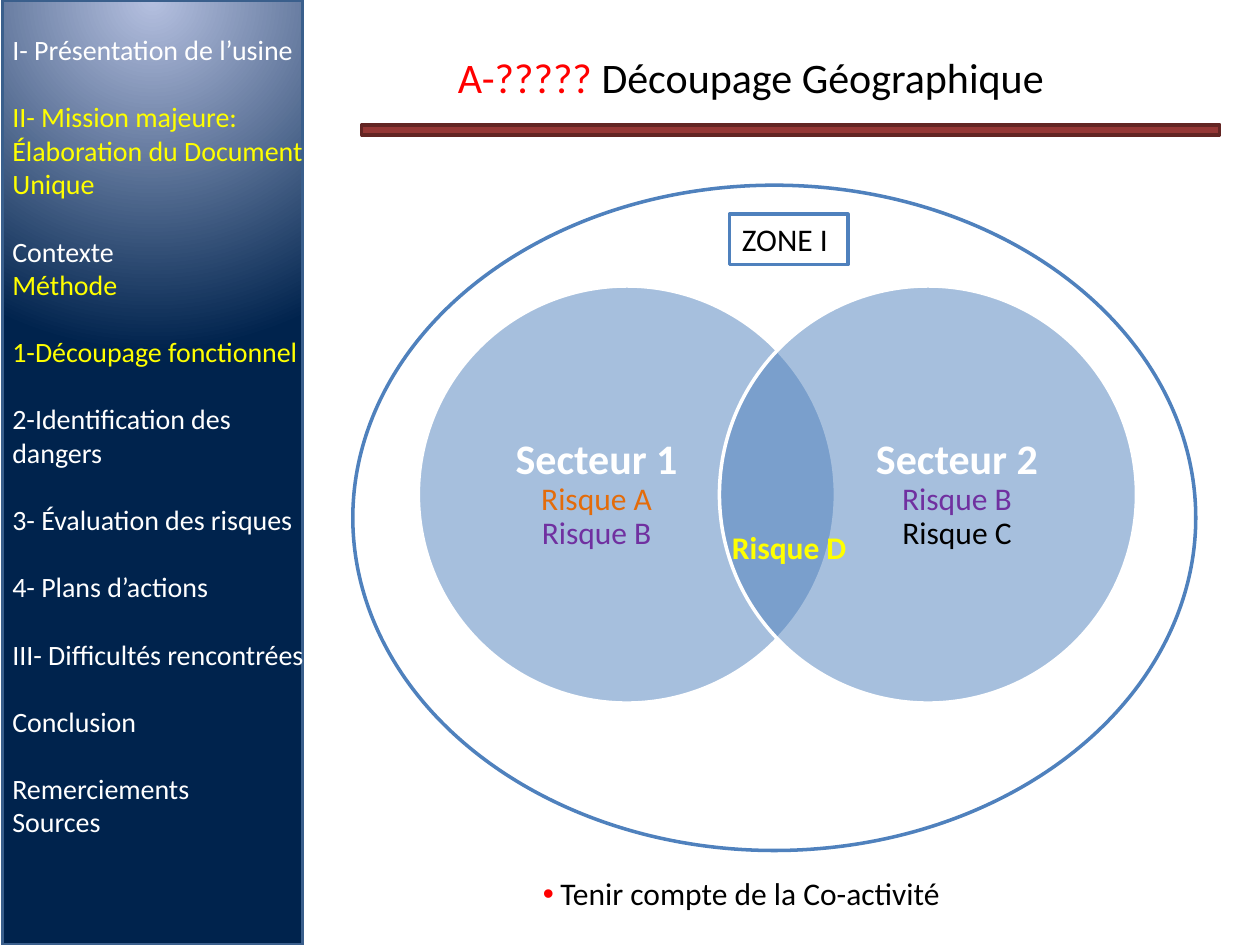
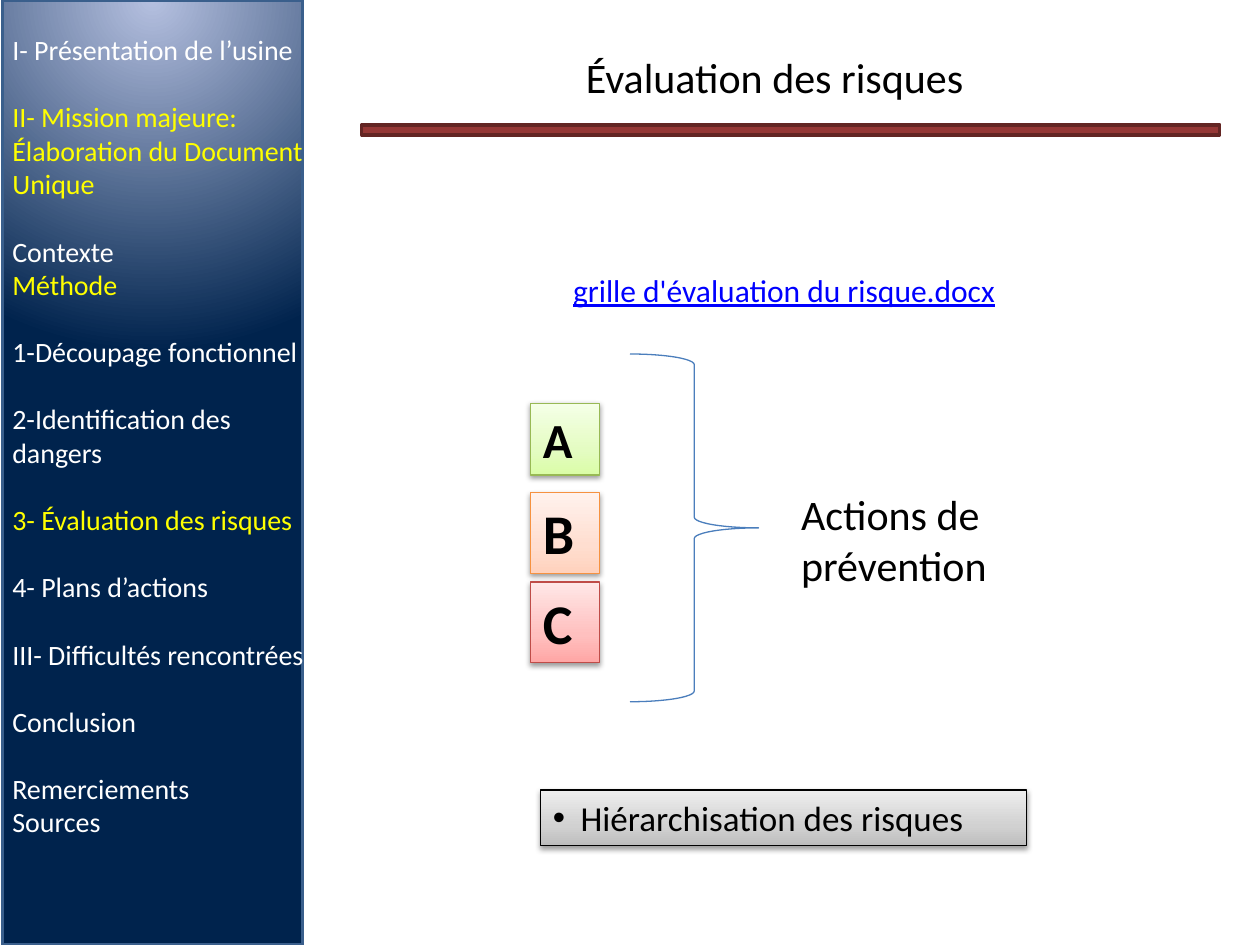
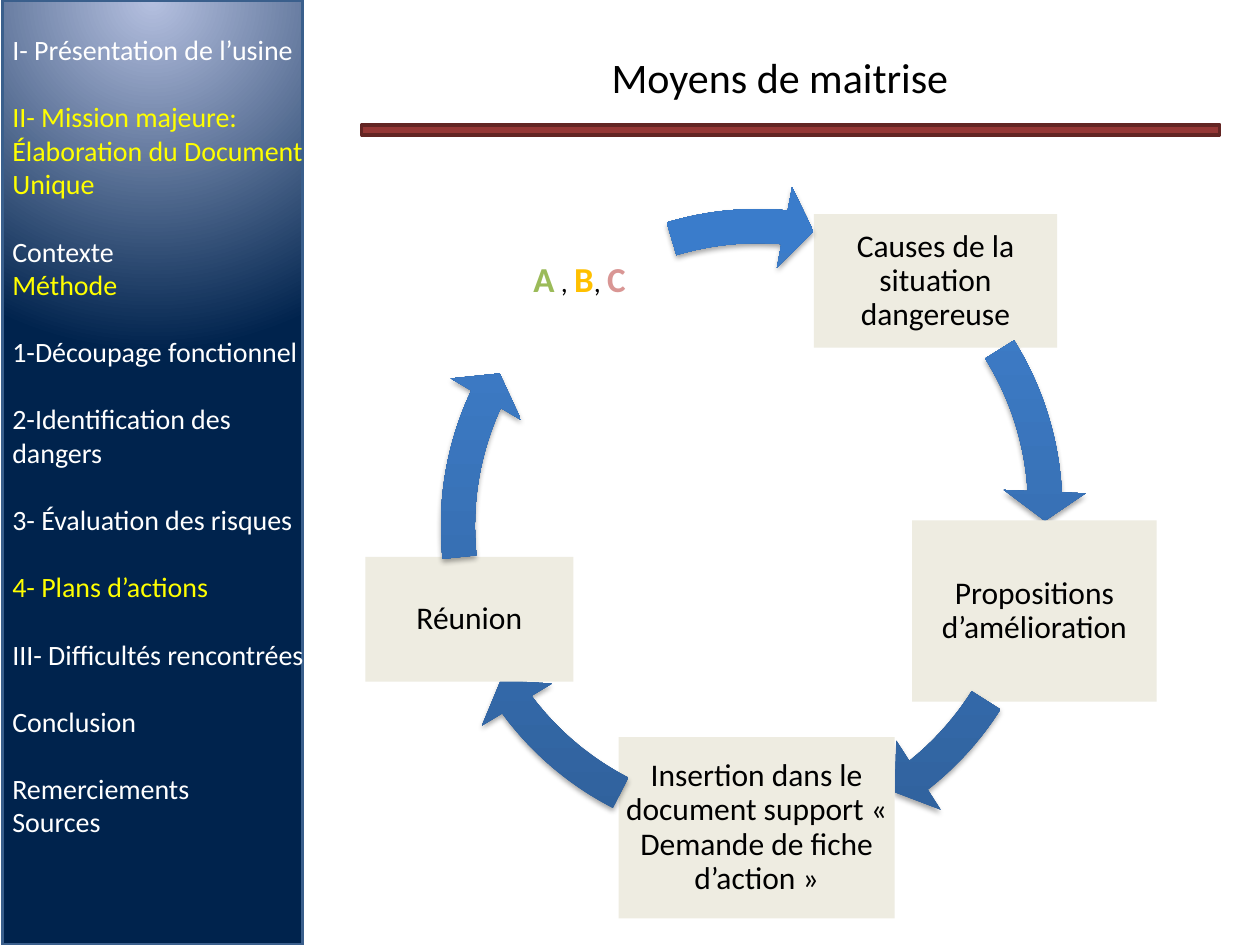
from lxml import etree
from pptx import Presentation
from pptx.dml.color import RGBColor
from pptx.enum.shapes import MSO_SHAPE as Shape
from pptx.enum.text import MSO_ANCHOR as Anchor, PP_ALIGN as Align
from pptx.oxml.ns import qn
from pptx.util import Inches, Pt

# Shared palette and wording
FONT = "Calibri"
BLACK, WHITE, RED, YELLOW = "000000", "FFFFFF", "FF0000", "FFFF00"
BLUE, BEIGE, PURPLE, ORANGE = "4F81BD", "EEECE1", "7030A0", "E46C0A"

SIDEBAR_STOPS = [(0, "B5C0E0"), (71, "00234D")]
GREEN_STOPS = [(0, "DAFDA7"), (35, "E4FCC2"), (100, "F5FFE7")]
ORANGE_STOPS = [(0, "FFD2BD"), (35, "FFDED0"), (100, "FFF2ED")]
RED_STOPS = [(0, "FFA6A5"), (35, "FFC0BF"), (100, "FFE7E7")]
GREY_STOPS = [(0, "BDBDBD"), (35, "D1D1D1"), (100, "EEEEEE")]
ARROW_STOPS = [(0, "2F5F99"), (80, "3D7CC7"), (100, "3A7CCB")]

BOX_SHADOW = (38, 1.6)
ARROW_SHADOW = (35, 1.8)

MISSION = "II- Mission majeure: Élaboration du Document Unique"
METHOD = "Méthode"
CUTTING = "1-Découpage fonctionnel"
EVALUATION = "3- Évaluation des risques"
PLANS = "4- Plans d’actions"
OUTLINE = [
    ["I- Présentation de l’usine"],
    [MISSION],
    ["Contexte", METHOD],
    [CUTTING],
    ["2-Identification des dangers"],
    [EVALUATION],
    [PLANS],
    ["III- Difficultés rencontrées"],
    ["Conclusion"],
    ["Remerciements", "Sources"],
]


def color(value):
    return RGBColor.from_string(value)


def run(text, size=18, tint=BLACK, **font):
    return text, tint, {"name": FONT, "size": Pt(size), **font}


def add_child(parent, tag, **attributes):
    return etree.SubElement(parent, qn(tag), {key: str(value) for key, value in attributes.items()})


class Deck:
    """Holds the presentation, its style and the current slide."""

    def __init__(self):
        self.presentation = Presentation()
        self.presentation.slide_width = Inches(10)
        self.presentation.slide_height = Inches(7.5)
        self.slide = None

    def new_slide(self, title_left, title_runs, active):
        layout = self.presentation.slide_layouts[6]
        self.slide = self.presentation.slides.add_slide(layout)
        self.shape(Shape.RECTANGLE, (0.02, 0, 2.38, 7.5), SIDEBAR_STOPS, ("3A5F8C", 2), radial=True)
        self.shape(Shape.RECTANGLE, (2.87, 0.99, 6.81, 0.08), "953735", ("632523", 2))
        self.text((title_left, 0.29, 9, 0.63), [title_runs], anchor=Anchor.MIDDLE, alignment=Align.CENTER)
        self.outline({MISSION, METHOD, active})

    def outline(self, highlighted):
        items = [line for group in OUTLINE for line in group]
        openers = {group[0] for group in OUTLINE[1:]}
        runs = [[run(line, 16, YELLOW if line in highlighted else WHITE)] for line in items]
        box = self.text((0, 0.21, 2.64, 6.83), runs)
        for line, paragraph in zip(items, box.text_frame.paragraphs):
            if line in openers:
                paragraph.space_before = Pt(19.2)

    def shape(self, kind, place, fill=None, line=None, radial=False, alpha=None, shadow=None):
        shape = self.slide.shapes.add_shape(kind, *map(Inches, place))
        shape.shadow.inherit = False
        # Fill
        if fill is None:
            shape.fill.background()
        elif isinstance(fill, str):
            shape.fill.solid()
            shape.fill.fore_color.rgb = color(fill)
        else:
            self.gradient(shape, fill, radial)
        if alpha:
            tint = shape._element.spPr.find(qn("a:solidFill"))[0]
            add_child(tint, "a:alpha", val=alpha * 1000)
        # Outline
        if line:
            shape.line.color.rgb = color(line[0])
            shape.line.width = Pt(line[1])
        else:
            shape.line.fill.background()
        # Shadow
        if shadow:
            opacity, distance = shadow
            effects = shape._element.spPr.find(qn("a:effectLst"))
            outer = add_child(effects, "a:outerShdw", blurRad=Pt(3.1), dist=Pt(distance),
                              dir=5400000, rotWithShape=0)
            tint = add_child(outer, "a:srgbClr", val=BLACK)
            add_child(tint, "a:alpha", val=opacity * 1000)
        return shape

    def gradient(self, shape, stops, radial):
        shape.fill.solid()
        properties = shape._element.spPr
        gradient = etree.Element(qn("a:gradFill"), rotWithShape="1")
        stop_list = add_child(gradient, "a:gsLst")
        for position, tint in stops:
            stop = add_child(stop_list, "a:gs", pos=position * 1000)
            add_child(stop, "a:srgbClr", val=tint)
        if radial:
            circle = add_child(gradient, "a:path", path="circle")
            add_child(circle, "a:fillToRect", l=50000, t=0, r=50000, b=100000)
        else:
            add_child(gradient, "a:lin", ang=16200000, scaled=0)
        properties.replace(properties.find(qn("a:solidFill")), gradient)

    def fill_text(self, shape, paragraphs, anchor=Anchor.TOP, inset=None, **layout):
        frame = shape.text_frame
        frame.word_wrap = True
        frame.vertical_anchor = anchor
        if inset is not None:
            for side in ("left", "top", "right", "bottom"):
                setattr(frame, f"margin_{side}", Inches(inset))
        for index, runs in enumerate(paragraphs):
            paragraph = frame.add_paragraph() if index else frame.paragraphs[0]
            for name, value in {"alignment": Align.LEFT, **layout}.items():
                setattr(paragraph, name, value)
            for text, tint, font in runs:
                if text == "\n":
                    paragraph.add_line_break()
                    continue
                piece = paragraph.add_run()
                piece.text = text
                piece.font.color.rgb = color(tint)
                for name, value in font.items():
                    setattr(piece.font, name, value)
        return shape

    def text(self, place, paragraphs, **layout):
        box = self.slide.shapes.add_textbox(*map(Inches, place))
        return self.fill_text(box, paragraphs, **layout)

    def diagram_text(self, shape, runs, inset):
        self.fill_text(shape, [runs], Anchor.MIDDLE, inset, alignment=Align.CENTER, line_spacing=0.9)

    def bullet(self, shape, indent, tint=BLACK):
        properties = shape.text_frame.paragraphs[0]._p.get_or_add_pPr()
        properties.set("marL", str(Inches(indent)))
        properties.set("indent", str(-Inches(indent)))
        add_child(add_child(properties, "a:buClr"), "a:srgbClr", val=tint)
        add_child(properties, "a:buFont", typeface="Arial")
        add_child(properties, "a:buChar", char="•")


def build_zones(deck):
    deck.new_slide(1.46, [run("A-????? ", 24, RED), run("Découpage Géographique", 24)], CUTTING)
    deck.shape(Shape.OVAL, (2.8, 1.47, 6.69, 5.28), WHITE, (BLUE, 2))

    # Overlapping sectors
    sectors = [
        (3.32, 3.78, "Secteur 1", ("Risque A", ORANGE), ("Risque B", PURPLE)),
        (5.71, 6.64, "Secteur 2", ("Risque B", PURPLE), ("Risque C", BLACK)),
    ]
    for circle_left, label_left, name, *risks in sectors:
        deck.shape(Shape.OVAL, (circle_left, 2.27, 3.31, 3.31), BLUE, (WHITE, 2), alpha=50)
        runs = [run(name, 24, WHITE, bold=True)]
        for risk, tint in risks:
            runs += [run("\n"), run(risk, tint=tint)]
        label = deck.text((label_left, 2.66, 1.91, 2.53), [])
        deck.diagram_text(label, runs, 0)
    deck.text((5.71, 4.14, 1.18, 0.4), [[run("Risque D", tint=YELLOW, bold=True)]])

    # Zone label and remark
    zone = deck.shape(Shape.RECTANGLE, (5.79, 1.7, 0.94, 0.4), WHITE, (BLUE, 2))
    deck.fill_text(zone, [[run("ZONE I")]])
    remark = deck.text((4.21, 6.89, 3.7, 0.4), [[run("Tenir compte de la Co-activité")]])
    deck.bullet(remark, 0.14, RED)


def build_evaluation(deck):
    deck.new_slide(1.61, [run(" Évaluation des risques", 24)], EVALUATION)
    deck.text((4.45, 2.1, 3.7, 0.4),
              [[run("grille d'évaluation du risque.docx", tint="0000FF", underline=True)]])

    # Risk levels
    levels = [
        ("A", 28, 3.2, 0.57, GREEN_STOPS, "98B955"),
        ("B", 32, 3.91, 0.64, ORANGE_STOPS, "F69240"),
        ("C", 32, 4.62, 0.64, RED_STOPS, "BF4C48"),
    ]
    for letter, size, top, height, stops, border in levels:
        level = deck.shape(Shape.RECTANGLE, (4.21, top, 0.55, height), stops, (border, 0.75),
                           shadow=BOX_SHADOW)
        deck.fill_text(level, [[run(letter, size, bold=True)]])

    # Outcome
    deck.shape(Shape.RIGHT_BRACE, (5, 2.81, 1.02, 2.76), line=("4B7EBC", 0.75))
    deck.text((6.26, 3.83, 2.44, 0.91), [[run("Actions de prévention", 24)]])
    ranking = deck.shape(Shape.RECTANGLE, (4.29, 6.27, 3.86, 0.44), GREY_STOPS, (BLACK, 0.75),
                         shadow=BOX_SHADOW)
    deck.fill_text(ranking, [[run("Hiérarchisation des risques", 20)]])
    deck.bullet(ranking, 0.22)


def build_cycle(deck):
    deck.new_slide(1.69, [run("Moyens de maitrise", 24)], PLANS)
    levels = [
        run("A", 20, "9BBB59", bold=True), run(" , ", 16),
        run("B", 20, "FFC000", bold=True), run(", ", 16),
        run("C", 20, "D99694", bold=True),
    ]
    # Each step: box, fill, text, then the arrow's corner and its end and start angles
    steps = [
        ((6.46, 1.7, 1.93, 1.06), BEIGE, [run("Causes de la situation dangereuse")],
         (3.21, 1.33), (214.08, 196.8)),
        ((7.24, 4.13, 1.94, 1.44), BEIGE, [run("Propositions d’amélioration")],
         (3.11, 1.58), (31.02, 19.4)),
        ((4.91, 5.85, 2.19, 1.44), BEIGE,
         [run("Insertion dans le document support « Demande de fiche d’action »")],
         (3.31, 1.47), (86.07, 70.33)),
        ((2.9, 4.42, 1.65, 0.99), BEIGE, [run("Réunion")],
         (3.31, 1.47), (123, 104.43)),
        ((3.88, 1.51, 1.44, 1.44), None, levels,
         (3.31, 1.47), (165.06, 151.97)),
    ]
    for place, fill, runs, corner, angles in steps:
        box = deck.shape(Shape.RECTANGLE, place, fill)
        deck.diagram_text(box, runs, 0.03)
        arrow = deck.shape(Shape.CIRCULAR_ARROW, (*corner, 5.41, 5.41), ARROW_STOPS,
                           shadow=ARROW_SHADOW)
        for index, value in enumerate((0.05, 3.35, *angles, 0.06)):
            arrow.adjustments[index] = value


def main():
    deck = Deck()
    build_zones(deck)
    build_evaluation(deck)
    build_cycle(deck)
    deck.presentation.save("out.pptx")


if __name__ == "__main__":
    main()
